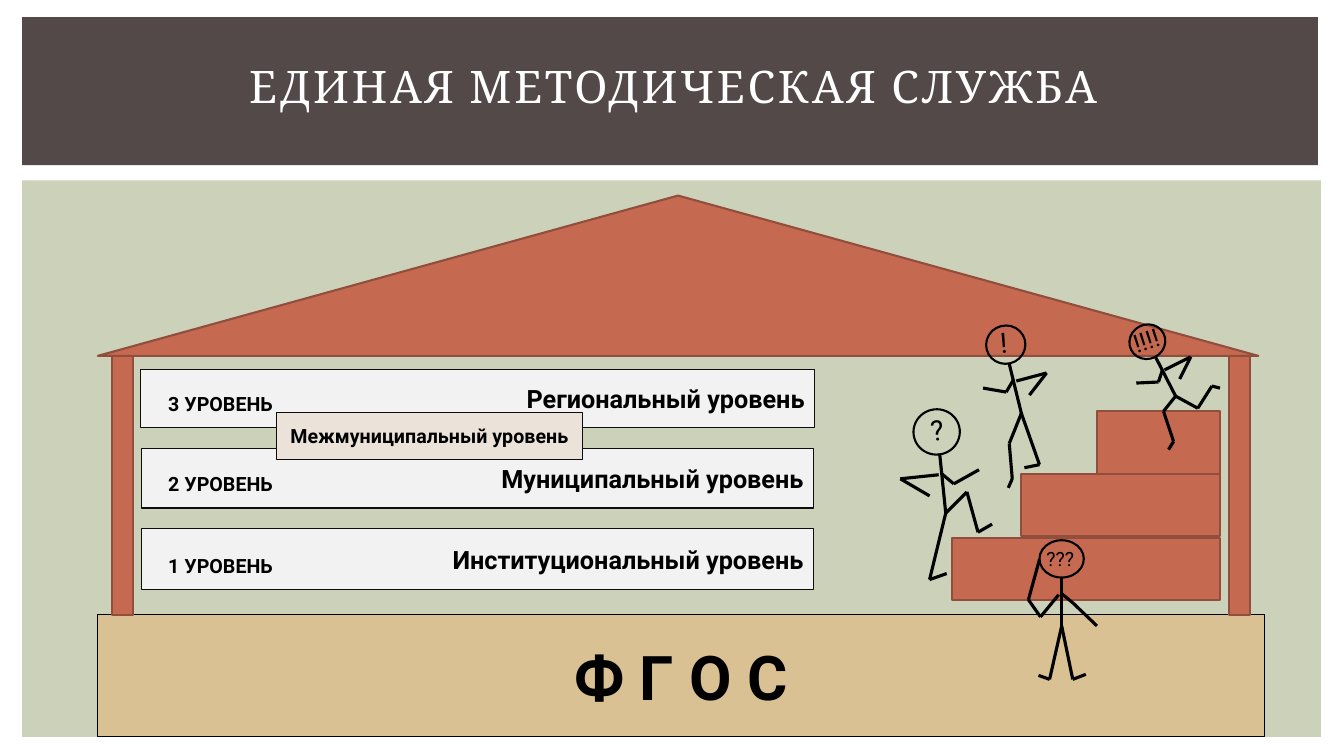
from itertools import pairwise

from lxml import etree
from pptx import Presentation
from pptx.dml.color import RGBColor
from pptx.enum.shapes import MSO_CONNECTOR, MSO_SHAPE as SHAPE
from pptx.enum.text import MSO_ANCHOR, MSO_AUTO_SIZE, PP_ALIGN as ALIGN
from pptx.oxml.ns import qn
from pptx.util import Inches, Pt

WIDTH, HEIGHT = Inches(13.33), Inches(7.5)
COL, ROW = WIDTH / 1333, HEIGHT / 750  # fine layout grid

BRICK, BRICK_EDGE = "C66951", "924E3C"
PANEL, PANEL_EDGE = "F2F2F2", "0D0D0D"
BLACK = "000000"

LEVELS = [  # label, name, left, top, width, height, label top
    ("1 УРОВЕНЬ", "Институциональный уровень", 140, 524, 667, 61, 545),
    ("2 УРОВЕНЬ", "Муниципальный уровень", 140, 445, 667, 59, 463),
    ("3 УРОВЕНЬ", "Региональный уровень", 139, 367, 669, 57, 384),
]

STEPS = [(944, 534, 61), (1013, 470, 62), (1088, 408, 62)]  # left, top, height
STEPS_RIGHT = 1210

# head box and turn; mark text, size, box and turn; limbs as joined points
CLIMBERS = [
    dict(head=(906, 406, 46, 45), head_turn=353.9,
         mark="?", size=20, mark_box=(913, 405, 34, 44), mark_turn=353.9,
         limbs=[[(932, 450), (938, 509), (922, 575), (939, 569)],
                [(938, 509), (959, 488), (970, 528), (984, 520)],
                [(931, 471), (893, 475), (922, 492)],
                [(934, 470), (946, 480), (971, 466)]]),
    dict(head=(978, 323, 39, 38), head_turn=346,
         mark="!", size=20, mark_box=(982, 318, 28, 44), mark_turn=355.6,
         limbs=[[(1001, 361), (1013, 410), (1031, 461), (1016, 464)],
                [(1013, 410), (1001, 440), (1004, 475), (1000, 484)],
                [(1008, 378), (1038, 370), (1021, 392)],
                [(1005, 377), (998, 389), (975, 385)]]),
    dict(head=(1120, 322, 36, 34), head_turn=332.9,
         mark="!!!!", size=18, mark_box=(1114, 317, 48, 40), mark_turn=342.5,
         limbs=[[(1146, 354), (1166, 393), (1188, 405), (1202, 383), (1210, 385)],
                [(1166, 393), (1154, 408), (1164, 438), (1159, 446)],
                [(1155, 367), (1181, 354), (1170, 376)],
                [(1153, 367), (1149, 379), (1127, 380)]]),
    dict(head=(1031, 536, 44, 37), head_turn=0,
         mark="???", size=14, mark_box=(1028, 538, 66, 34), mark_turn=0,
         limbs=[[(1053, 573), (1053, 621), (1041, 674), (1030, 670)],
                [(1053, 621), (1064, 674), (1077, 669)],
                [(1050, 590), (1032, 612), (1020, 595), (1031, 555)],
                [(1053, 589), (1064, 598), (1088, 621)]]),
]


def grid(x, y, *size):
    """Turn grid columns and rows into lengths."""
    return [round(n * unit) for n, unit in zip((x, y, *size), (COL, ROW) * 2)]


def rgb(hex_color):
    return RGBColor.from_string(hex_color)


def style_text(tf, text, size, align=ALIGN.LEFT, bold=False, font="Roboto", color=BLACK):
    tf.text = text
    p = tf.paragraphs[0]
    p.alignment = align
    r = p.runs[0]
    r.font.name, r.font.size, r.font.bold = font, Pt(size), bold
    r.font.color.rgb = rgb(color)
    return r


def add_block(shapes, box, fill=None, edge=None, weight=0.75, kind=SHAPE.RECTANGLE):
    sp = shapes.add_shape(kind, *grid(*box))
    sp.shadow.inherit = False
    if fill:
        sp.fill.solid()
        sp.fill.fore_color.rgb = rgb(fill)
    else:
        sp.fill.background()
    if edge:
        sp.line.color.rgb = rgb(edge)
        sp.line.width = Pt(weight)
    else:
        sp.line.fill.background()
    return sp


def add_panel(shapes, box, fill, edge, text, size, align=ALIGN.CENTER):
    tf = add_block(shapes, box, fill, edge).text_frame
    tf.word_wrap = True
    tf.vertical_anchor = MSO_ANCHOR.MIDDLE
    tf.margin_top = tf.margin_bottom = 0
    style_text(tf, text, size, align, bold=True)


def add_label(shapes, box, text, size, bold=False, wrap=True):
    sp = shapes.add_textbox(*grid(*box))
    tf = sp.text_frame
    tf.word_wrap = wrap
    tf.auto_size = MSO_AUTO_SIZE.SHAPE_TO_FIT_TEXT
    style_text(tf, text, size, bold=bold)
    return sp


def add_limb(shapes, points):
    for start, end in pairwise(points):
        line = shapes.add_connector(MSO_CONNECTOR.STRAIGHT, *grid(*start), *grid(*end))
        line.line.color.rgb = rgb(BLACK)
        line.line.width = Pt(2.25)
        etree.SubElement(line.element.spPr, qn("a:effectLst"))


def add_climber(s, head, head_turn, mark, size, mark_box, mark_turn, limbs):
    shapes = s.shapes.add_group_shape().shapes
    add_block(shapes, head, edge=BLACK, weight=1.5, kind=SHAPE.OVAL).rotation = head_turn
    for points in limbs:
        add_limb(shapes, points)
    add_label(shapes, mark_box, mark, size, wrap=False).rotation = mark_turn


def add_header(s):
    add_block(s.shapes, (22, 179, 1288, 552), "CCD1B9")
    add_block(s.shapes, (22, 17, 1285, 147), "534949")
    title = s.shapes.title
    title.left, title.top, title.width, title.height = grid(18, 40, 1300, 89)
    title.text_frame.vertical_anchor = MSO_ANCHOR.MIDDLE
    r = style_text(title.text_frame, "ЕДИНАЯ МЕТОДИЧЕСКАЯ СЛУЖБА", 32, ALIGN.CENTER,
                   font="Cambria", color="FFFFFF")
    r.font.element.set("spc", "200") if hasattr(r.font, "element") else \
        r.font.language_id and None
    r_pr = title.element.find(".//" + qn("a:rPr"))
    r_pr.set("spc", "200")
    title.element.getparent().append(title.element)  # bring in front of the bands


def add_house(s):
    add_panel(s.shapes, (97, 610, 1157, 121), "D9C194", BLACK, "Ф Г О С", 44)
    roof = add_block(s.shapes, (97, 194, 1151, 159), BRICK, BRICK_EDGE, 1.5,
                     SHAPE.ISOSCELES_TRIANGLE)
    roof.adjustments[0] = 0.5
    for left in (111, 1219):
        add_block(s.shapes, (left, 353, 21, 257), BRICK, BRICK_EDGE, 1.5)
    for left, top, height in STEPS:
        add_block(s.shapes, (left, top, STEPS_RIGHT - left, height), BRICK, BRICK_EDGE, 1.5)


def add_levels(s):
    for label, name, left, top, width, height, label_top in LEVELS:
        add_panel(s.shapes, (left, top, width, height), PANEL, PANEL_EDGE,
                  name, 18, ALIGN.RIGHT)
        add_label(s.shapes, (157, label_top, 258, 34), label, 14, bold=True)


def main():
    prs = Presentation()
    prs.slide_width, prs.slide_height = WIDTH, HEIGHT
    s = prs.slides.add_slide(prs.slide_layouts[5])
    add_header(s)
    add_house(s)
    add_levels(s)
    for climber in CLIMBERS:
        add_climber(s, **climber)
    add_panel(s.shapes, (274, 409, 304, 47), "EBE3DA", PANEL_EDGE,
              "Межмуниципальный уровень", 14)
    prs.save("out.pptx")


if __name__ == "__main__":
    main()
